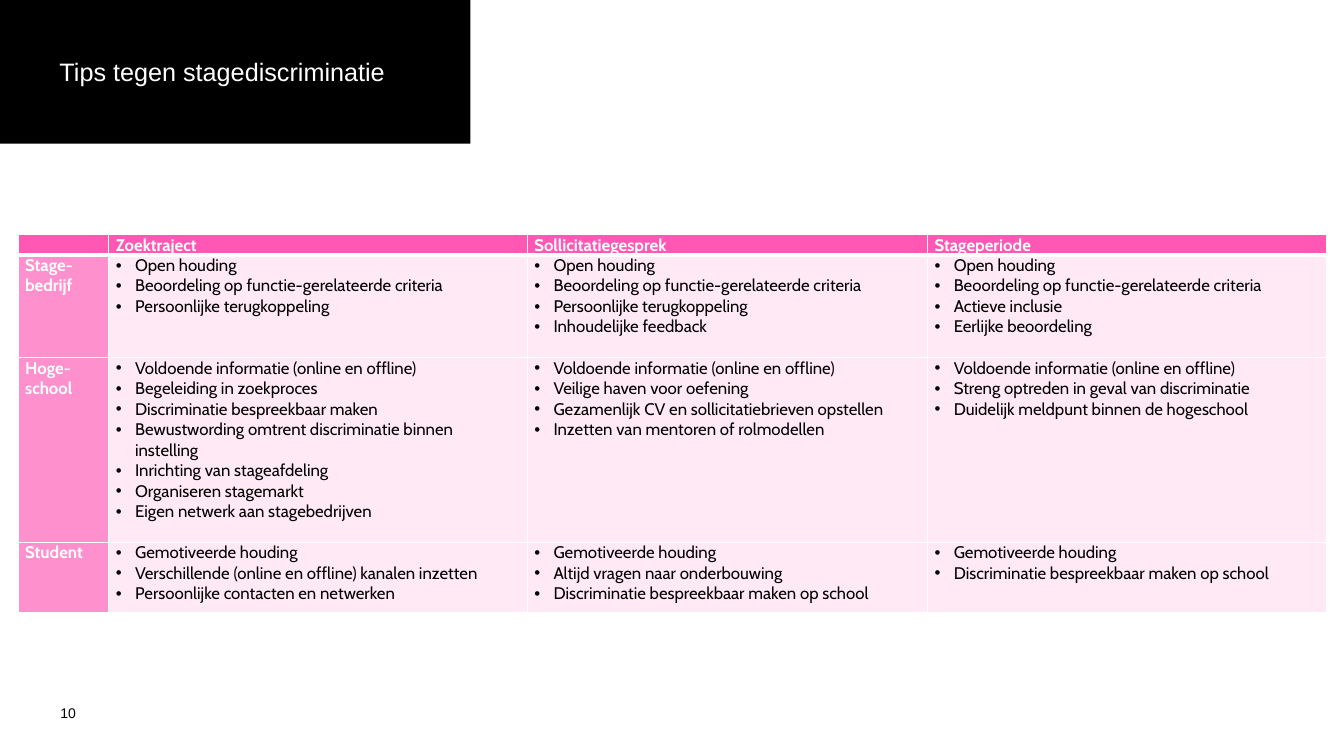
from lxml import etree
from pptx import Presentation
from pptx.dml.color import RGBColor
from pptx.enum.shapes import MSO_SHAPE
from pptx.enum.text import MSO_ANCHOR, PP_ALIGN
from pptx.oxml.ns import qn
from pptx.util import Inches, Pt

RECT = MSO_SHAPE.RECTANGLE
TOP, MIDDLE = MSO_ANCHOR.TOP, MSO_ANCHOR.MIDDLE
LEFT = PP_ALIGN.LEFT

WIDE, HIGH = 13.33, 7.5
COLS = [0.9, 4.15, 3.97, 3.96]
ROWS = [0.2, 1.02, 1.83, 0.7]
INDENT = 0.19
COLORS = {"black": "000000", "white": "FFFFFF", "head": "FE58B4",
          "side": "FE90CD", "body": "FFE9F5"}

HEADS = ["", "Zoektraject", "Sollicitatiegesprek", "Stageperiode"]
TIPS = {
    "Stage-bedrijf": [
        ["Open houding", "Beoordeling op functie-gerelateerde criteria",
         "Persoonlijke terugkoppeling"],
        ["Open houding", "Beoordeling op functie-gerelateerde criteria",
         "Persoonlijke terugkoppeling", "Inhoudelijke feedback"],
        ["Open houding", "Beoordeling op functie-gerelateerde criteria",
         "Actieve inclusie", "Eerlijke beoordeling"],
    ],
    "Hoge-school": [
        ["Voldoende informatie (online en offline)",
         "Begeleiding in zoekproces", "Discriminatie bespreekbaar maken",
         "Bewustwording omtrent discriminatie binnen instelling",
         "Inrichting van stageafdeling", "Organiseren stagemarkt",
         "Eigen netwerk aan stagebedrijven"],
        ["Voldoende informatie (online en offline)",
         "Veilige haven voor oefening",
         "Gezamenlijk CV en sollicitatiebrieven opstellen",
         "Inzetten van mentoren of rolmodellen"],
        ["Voldoende informatie (online en offline)",
         "Streng optreden in geval van discriminatie",
         "Duidelijk meldpunt binnen de hogeschool"],
    ],
    "Student": [
        ["Gemotiveerde houding",
         "Verschillende (online en offline) kanalen inzetten",
         "Persoonlijke contacten en netwerken"],
        ["Gemotiveerde houding", "Altijd vragen naar onderbouwing",
         "Discriminatie bespreekbaar maken op school"],
        ["Gemotiveerde houding",
         "Discriminatie bespreekbaar maken op school"],
    ],
}


def paint(fill, color):
    fill.solid()
    fill.fore_color.rgb = RGBColor.from_string(COLORS[color])


def write(frame, lines, font="Arial", size=12, color="black", bold=False,
          bullet=False):
    for i, line in enumerate(lines):
        para = frame.paragraphs[0] if i == 0 else frame.add_paragraph()
        para.alignment = LEFT
        if bullet:
            props = para._p.get_or_add_pPr()
            props.set("marL", str(Inches(INDENT)))
            props.set("indent", str(-Inches(INDENT)))
            etree.SubElement(props, qn("a:buFont"), typeface="Arial")
            etree.SubElement(props, qn("a:buChar"), char="•")
        if line:
            para.add_run().text = line
        # An empty cell takes its line height from the end mark
        else:
            etree.SubElement(para._p, qn("a:endParaRPr"), sz=str(size * 100))
        for item in [para, *para.runs]:
            item.font.name, item.font.size = font, Pt(size)
            item.font.bold = bold
            item.font.color.rgb = RGBColor.from_string(COLORS[color])


def edge(cell, top=1, bottom=1):
    props = cell._tc.get_or_add_tcPr()
    sides = {"L": 1, "R": 1, "T": top, "B": bottom}
    for i, (side, width) in enumerate(sides.items()):
        line = etree.Element(qn(f"a:ln{side}"), w=str(Pt(width)))
        fill = etree.SubElement(line, qn("a:solidFill"))
        etree.SubElement(fill, qn("a:srgbClr"), val=COLORS["white"])
        props.insert(i, line)


def title(slide, left, top, width, height):
    box = slide.shapes.add_shape(RECT, *map(Inches, (left, top, width, height)))
    box.shadow.inherit = False
    paint(box.fill, "black")
    box.line.fill.background()
    frame = box.text_frame
    frame.word_wrap = False
    frame.vertical_anchor = MIDDLE
    frame.margin_left = Inches(0.59)
    write(frame, ["Tips tegen stagediscriminatie"], size=18, color="white")


def grid(slide, left, top):
    size = sum(COLS), sum(ROWS)
    table = slide.shapes.add_table(len(ROWS), len(COLS),
                                   *map(Inches, (left, top, *size))).table
    table.first_row = table.horz_banding = False
    for col, width in zip(table.columns, COLS):
        col.width = Inches(width)
    for row, height in zip(table.rows, ROWS):
        row.height = Inches(height)

    # Header row, then one row for each party
    cells = [[[head] for head in HEADS]]
    cells += [[[party], *tips] for party, tips in TIPS.items()]
    for r, row in enumerate(cells):
        for c, lines in enumerate(row):
            cell = table.cell(r, c)
            cell.margin_left = cell.margin_right = Inches(0.07)
            cell.margin_top = cell.margin_bottom = 0
            cell.vertical_anchor = TOP
            label = r == 0 or c == 0
            paint(cell.fill, "head" if r == 0 else "side" if c == 0 else "body")
            edge(cell, top=3 if r == 1 else 1, bottom=3 if r == 0 else 1)
            write(cell.text_frame, lines, font="Cabin", bold=label,
                  color="white" if label else "black", bullet=not label)


def number(slide, left, top, width, height):
    box = slide.shapes.add_textbox(*map(Inches, (left, top, width, height)))
    frame = box.text_frame
    frame.word_wrap = True
    frame.vertical_anchor = MIDDLE
    frame.margin_left = frame.margin_right = 0
    frame.margin_top = frame.margin_bottom = 0
    write(frame, ["10"], size=10)


def main():
    deck = Presentation()
    deck.slide_width, deck.slide_height = Inches(WIDE), Inches(HIGH)
    slide = deck.slides.add_slide(deck.slide_layouts[6])
    title(slide, 0, 0, WIDE * 0.35, HIGH * 0.19)
    number(slide, 0.6, 7, 0.29, 0.14)
    grid(slide, 0.18, 2.33)
    deck.save("out.pptx")


if __name__ == "__main__":
    main()
